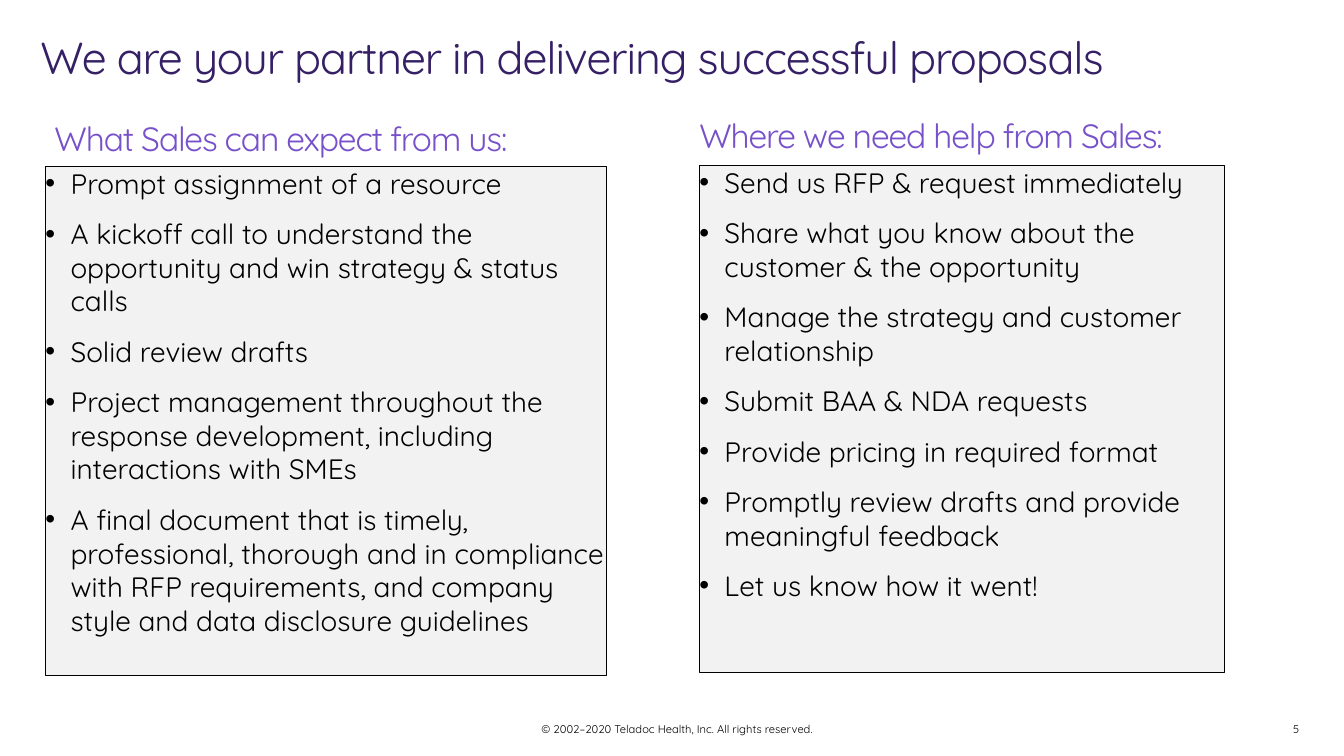
from lxml import etree
from pptx import Presentation
from pptx.dml.color import RGBColor
from pptx.enum.text import MSO_ANCHOR, MSO_AUTO_SIZE, PP_ALIGN
from pptx.oxml.ns import qn
from pptx.util import Pt

LEFT, CENTER, RIGHT = PP_ALIGN.LEFT, PP_ALIGN.CENTER, PP_ALIGN.RIGHT
TOP = MSO_ANCHOR.TOP
NO_AUTOFIT = MSO_AUTO_SIZE.NONE
FONT = "Quicksand"
INK, NAVY, PURPLE, PANEL = "000000", "351F65", "7751CA", "F2F2F2"

EXPECT = [
    "Prompt assignment of a resource",
    "A kickoff call to understand the opportunity and win strategy & status calls",
    "Solid review drafts",
    "Project management throughout the response development, including "
    "interactions with SMEs",
    "A final document that is timely, professional, thorough and in compliance "
    "with RFP requirements, and company style and data disclosure guidelines",
]
HELP = [
    "Send us RFP & request immediately",
    "Share what you know about the customer & the opportunity",
    "Manage the strategy and customer relationship",
    "Submit BAA & NDA requests",
    "Provide pricing in required format",
    "Promptly review drafts and provide meaningful feedback",
    "Let us know how it went!",
]


def color(value):
    return RGBColor.from_string(value)


def place(sp, left, top, width, height):
    sp.left, sp.top, sp.width, sp.height = Pt(left), Pt(top), Pt(width), Pt(height)
    tf = sp.text_frame
    tf.margin_left = tf.margin_top = tf.margin_right = tf.margin_bottom = 0
    tf.word_wrap = True
    tf.auto_size = NO_AUTOFIT
    tf.vertical_anchor = TOP
    return tf


def add_run(p, text, size, fill, tracking=0):
    r = p.add_run()
    r.text = text
    r.font.name = FONT
    r.font.size = Pt(size)
    r.font.bold = False
    r.font.color.rgb = color(fill)
    if tracking:
        r.font._element.set("spc", str(tracking))


def add_line(sp, box, text, size, fill, align=LEFT, tracking=0):
    p = place(sp, *box).paragraphs[0]
    p.alignment = align
    p.space_before = Pt(0)
    add_run(p, text, size, fill, tracking)


def add_bullet(p):
    pPr = p._p.get_or_add_pPr()
    pPr.set("marL", str(Pt(18)))
    pPr.set("indent", str(-Pt(18)))
    clr = etree.SubElement(pPr, qn("a:buClr"))
    etree.SubElement(clr, qn("a:srgbClr"), val=INK)
    etree.SubElement(pPr, qn("a:buFont"), typeface="Arial")
    etree.SubElement(pPr, qn("a:buChar"), char="•")


def add_panel(sp, box, items):
    tf = place(sp, *box)
    sp.fill.solid()
    sp.fill.fore_color.rgb = color(PANEL)
    sp.line.color.rgb = color(INK)
    sp.line.width = Pt(0.75)
    for i, item in enumerate(items):
        p = tf.add_paragraph() if i else tf.paragraphs[0]
        add_bullet(p)
        p.alignment = LEFT
        p.line_spacing = Pt(24)
        p.space_before = Pt(12 if i else 0)
        add_run(p, item, 20, INK)


def add_footer(s, box, text, align):
    sp = s.shapes.add_textbox(0, 0, 0, 0)
    add_line(sp, box, text, 8, INK, align)


def main():
    prs = Presentation()
    prs.slide_width, prs.slide_height = Pt(960), Pt(540)
    s = prs.slides.add_slide(prs.slide_layouts[4])
    title, left_head, left_body, right_head, right_body = s.placeholders

    add_line(title, (28.8, 20.9, 902, 38.9),
             "We are your partner in delivering successful proposals",
             32, NAVY, tracking=-80)
    add_line(left_head, (38.9, 84.2, 460.8, 28.8),
             "What Sales can expect from us:", 24, PURPLE, tracking=-80)
    add_panel(left_body, (32.4, 118.8, 401, 363.6), EXPECT)
    add_line(right_head, (499.5, 82.1, 460.5, 28.8),
             "Where we need help from Sales:", 24, PURPLE, tracking=-80)
    add_panel(right_body, (499.5, 118.1, 375.1, 362.2), HELP)

    add_footer(s, (359.3, 516.2, 251.3, 9.6),
               "© 2002–2020 Teladoc Health, Inc. All rights reserved. ", CENTER)
    add_footer(s, (895.7, 516.2, 32.4, 9.6), "5", RIGHT)
    prs.save("out.pptx")


if __name__ == "__main__":
    main()
